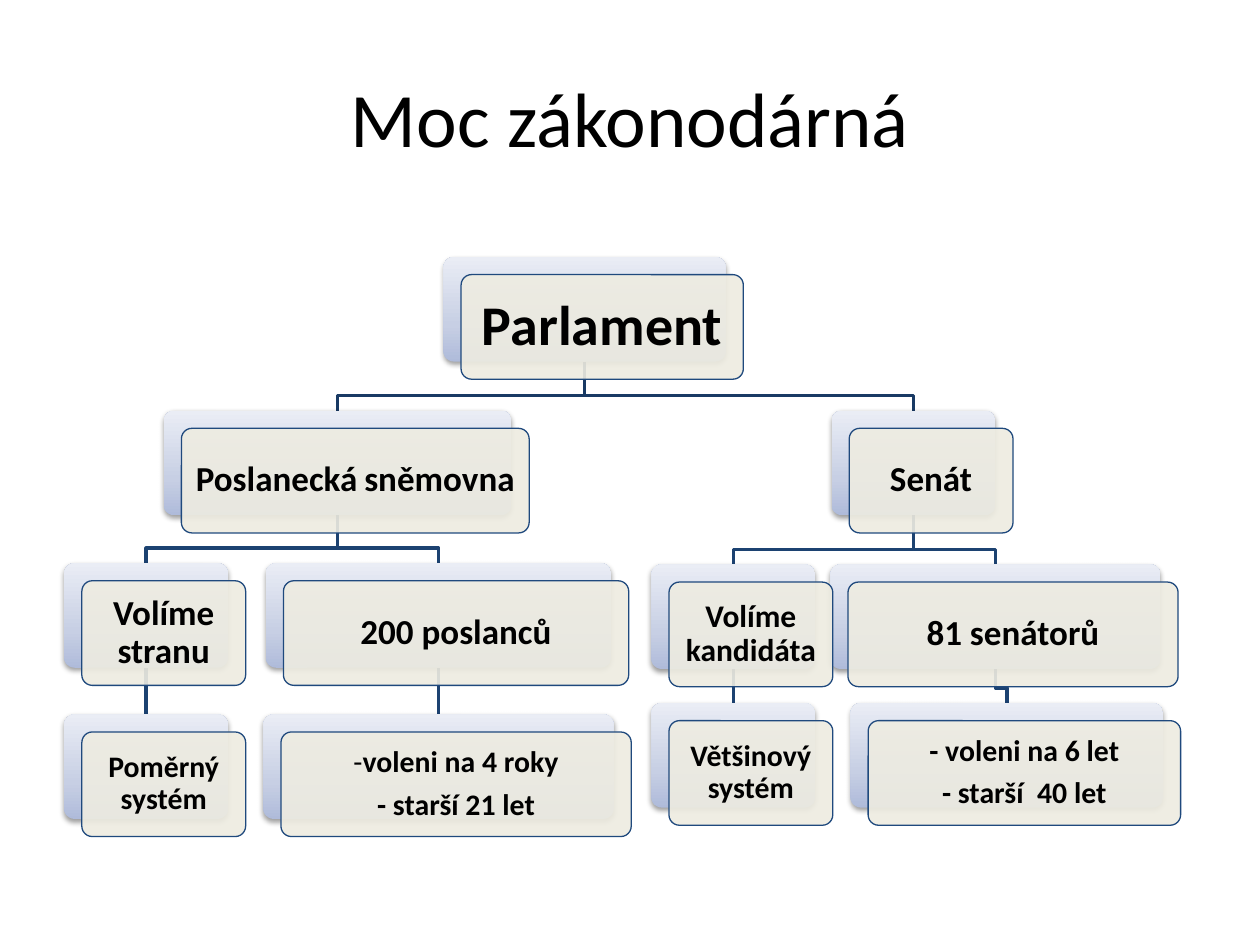
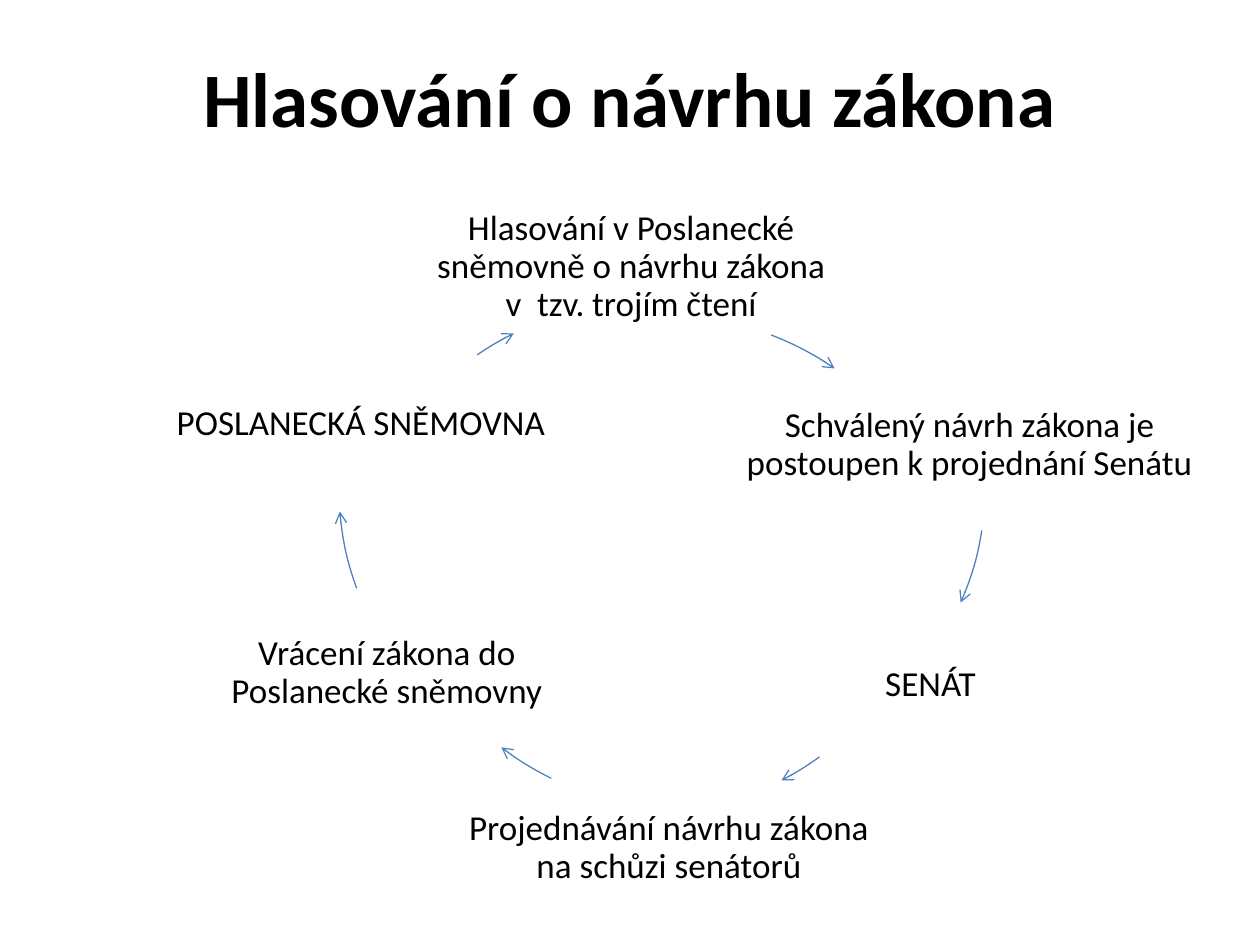
"""Build two slides on the legislative power: a parliament tree and the cycle of a bill."""
from math import atan2, degrees

from lxml import etree
from pptx import Presentation
from pptx.dml.color import RGBColor
from pptx.enum.shapes import MSO_CONNECTOR, MSO_SHAPE
from pptx.enum.text import MSO_ANCHOR, PP_ALIGN
from pptx.oxml.ns import qn
from pptx.util import Inches, Pt

CENTER, MIDDLE = PP_ALIGN.CENTER, MSO_ANCHOR.MIDDLE
ROUNDED, ARC, STRAIGHT = MSO_SHAPE.ROUNDED_RECTANGLE, MSO_SHAPE.ARC, MSO_CONNECTOR.STRAIGHT
BOTTOM_SIDE, TOP_SIDE = 2, 0

FONT = "Calibri"
BLACK, WHITE, CREAM = "000000", "FFFFFF", "EEECE1"
CARD_LINE, ROOT_LINK, LINK, ARROW = "1F497D", "193A64", "1C4271", "4F81BD"
BACK_STOPS = [(0, "AFBBDA"), (35, "C7CFE4"), (100, "EAEDF5")]

CARD_HEIGHT, CARD_OFFSET, BEND_GAP = 0.83, 0.14, 0.12
STEP_HEIGHT, CIRCLE = 0.98, 4.61
SMALL_SPACE = (" ", 17, True)

# name: parent, centre, top, width, size, paragraphs of (text, size, bold)
TREE_TITLE = ("Moc zákonodárná", 1.25, False)
TREE = {
    "parliament": (None, 4.64, 2.04, 2.24, 32, [[("Parlament", 32, True)]]),
    "chamber": ("parliament", 2.68, 3.26, 2.76, 20,
                [[("Poslanecká", 20, True), SMALL_SPACE, ("sněmovna", 20, True)]]),
    "party": ("chamber", 1.16, 4.47, 1.3, 20,
              [[("Volíme", 20, True), SMALL_SPACE, ("stranu", 20, True)]]),
    "proportional": ("party", 1.16, 5.67, 1.3, 17, [[("Poměrný systém", 17, True)]]),
    "deputies": ("chamber", 3.48, 4.47, 2.74, 20, [[("200 poslanců", 20, True)]]),
    "deputy terms": ("deputies", 3.48, 5.67, 2.78, 17,
                     [[("-", 17, False), ("voleni na 4 roky", 17, True)],
                      [("- starší 21 let", 17, True)]]),
    "senate": ("parliament", 7.25, 3.26, 1.3, 20, [[("Senát", 20, True)]]),
    "senators": ("senate", 7.9, 4.48, 2.62, 20, [[("81 senátorů", 20, True)]]),
    "senator terms": ("senators", 7.99, 5.58, 2.48, 17,
                      [[("- voleni na 6 let", 17, True)], [("- starší  40 let", 17, True)]]),
    "candidate": ("senate", 5.82, 4.48, 1.3, 18, [[("Volíme kandidáta", 18, True)]]),
    "majority": ("candidate", 5.82, 5.58, 1.3, 17, [[("Většinový systém", 17, True)]]),
}

# text, box (left, top, width), arrow to the next step (circle corner, start, end)
CYCLE_TITLE = ("Hlasování o návrhu zákona", 0.93, True)
CYCLE = [
    ("Hlasování v Poslanecké sněmovně o návrhu zákona v  tzv. trojím čtení",
     (3.29, 1.63, 3.44), ((3, 2.51), (6.12, 2.66), (6.62, 2.93))),
    ("Schválený návrh zákona je postoupen k projednání Senátu",
     (5.79, 3.04, 3.81), ((3.21, 1.55), (7.79, 4.21), (7.62, 4.78))),
    ("SENÁT", (6.26, 4.95, 2.25), ((2.84, 1.84), (6.5, 6), (6.2, 6.19))),
    ("Projednávání návrhu zákona na schůzi senátorů",
     (3.43, 6.24, 3.76), ((3.08, 1.8), (4.38, 6.17), (3.98, 5.93))),
    ("Vrácení zákona do Poslanecké sněmovny",
     (1.38, 4.85, 3.38), ((2.69, 1.57), (2.83, 4.67), (2.7, 4.06))),
    ("POSLANECKÁ SNĚMOVNA",
     (1.22, 2.88, 3.29), ((2.79, 2.41), (3.79, 2.82), (4.08, 2.65))),
]


def color(value):
    return RGBColor.from_string(value)


def add_xml(parent, tag, **attributes):
    return etree.SubElement(parent, qn(tag), {key: str(value) for key, value in attributes.items()})


def set_line(shape, value, width):
    shape.line.color.rgb = color(value)
    shape.line.width = Pt(width)


def add_titled_slide(deck, text, height, bold):
    slide = deck.slides.add_slide(deck.slide_layouts[5])
    title = slide.shapes.title
    title.left, title.top, title.width, title.height = map(Inches, (0.5, 0.3, 9, height))
    title.text_frame.text = text
    title.text_frame.vertical_anchor = MIDDLE
    para = title.text_frame.paragraphs[0]
    para.alignment = CENTER
    para.font.name, para.font.size, para.font.bold = FONT, Pt(44), bold
    para.font.color.rgb = color(BLACK)
    return slide


def add_box(slide, left, top, width, height, kind=ROUNDED):
    box = slide.shapes.add_shape(kind, *map(Inches, (left, top, width, height)))
    box.shadow.inherit = False
    return box


def write_text(box, paragraphs, size):
    frame = box.text_frame
    frame.word_wrap = True
    frame.vertical_anchor = MIDDLE
    inset = Inches(size * 0.004)
    frame.margin_left = frame.margin_right = frame.margin_top = frame.margin_bottom = inset
    for index, spans in enumerate(paragraphs):
        para = frame.add_paragraph() if index else frame.paragraphs[0]
        para.alignment, para.line_spacing = CENTER, 0.9
        para.space_after = Pt(size * 0.35)
        para.font.name = FONT
        para.font.color.rgb = color(BLACK)
        for text, span_size, bold in spans:
            span = para.add_run()
            span.text = text
            span.font.size, span.font.bold = Pt(span_size), bold


def add_back_card(slide, left, top, width):
    card = add_box(slide, left, top, width, CARD_HEIGHT)
    card.adjustments[0] = 0.1
    card.line.fill.background()
    card.fill.gradient()
    card.fill.gradient_angle = 90
    properties = card.element.spPr
    stops = properties.find(".//" + qn("a:gsLst"))
    for stop in list(stops):
        stops.remove(stop)
    for position, value in BACK_STOPS:
        add_xml(add_xml(stops, "a:gs", pos=position * 1000), "a:srgbClr", val=value)
    shadow = add_xml(properties.find(qn("a:effectLst")), "a:outerShdw", blurRad=Pt(3.1),
                     dist=Pt(1.6), dir=90 * 60000, rotWithShape=0)
    add_xml(add_xml(shadow, "a:srgbClr", val=BLACK), "a:alpha", val=38000)
    return card


def add_front_card(slide, left, top, width, paragraphs, size):
    card = add_box(slide, left + CARD_OFFSET, top + CARD_OFFSET, width, CARD_HEIGHT)
    card.adjustments[0] = 0.1
    card.fill.solid()
    card.fill.fore_color.rgb = color(CREAM)
    add_xml(card.element.spPr.find(qn("a:solidFill"))[0], "a:alpha", val=90000)
    set_line(card, CARD_LINE, 0.75)
    write_text(card, paragraphs, size)


def add_link(slide, parent, child, start, end):
    (x1, y1), (x2, y2) = start, end
    if x1 == x2:
        link = slide.shapes.add_connector(STRAIGHT, *map(Inches, (x1, y1, x2, y2)))
        link.begin_connect(parent, BOTTOM_SIDE)
        link.end_connect(child, TOP_SIDE)
        add_xml(link.element.spPr, "a:effectLst")
    else:
        bend = y2 - BEND_GAP
        corners = [(x1, bend), (x2, bend), end]
        builder = slide.shapes.build_freeform(Inches(x1), Inches(y1))
        builder.add_line_segments([(Inches(x), Inches(y)) for x, y in corners], close=False)
        link = builder.convert_to_shape()
        link.shadow.inherit = False
        link.fill.background()
    return link


def build_tree(deck):
    slide = add_titled_slide(deck, *TREE_TITLE)
    cards = {}
    for name, (_, center, top, width, size, paragraphs) in TREE.items():
        left = center - width / 2
        cards[name] = add_back_card(slide, left, top, width)
        add_front_card(slide, left, top, width, paragraphs, size)
    for name, (parent, center, top, *_) in TREE.items():
        if parent:
            _, parent_center, parent_top, *_ = TREE[parent]
            link = add_link(slide, cards[parent], cards[name],
                            (parent_center, parent_top + CARD_HEIGHT), (center, top))
            set_line(link, ROOT_LINK if parent == "parliament" else LINK, 2)
            cards["parliament"].element.addprevious(link.element)


def add_arc_arrow(slide, corner, start, end):
    left, top = corner
    arc = add_box(slide, left, top, CIRCLE, CIRCLE, ARC)
    arc.fill.background()
    set_line(arc, ARROW, 0.75)
    for index, (x, y) in enumerate((start, end)):
        angle = degrees(atan2(y - top - CIRCLE / 2, x - left - CIRCLE / 2)) % 360
        arc.adjustments[index] = angle * 0.6
    add_xml(arc.element.spPr.find(qn("a:ln")), "a:tailEnd", type="arrow")


def build_cycle(deck):
    slide = add_titled_slide(deck, *CYCLE_TITLE)
    for text, position, arrow in CYCLE:
        step = add_box(slide, *position, STEP_HEIGHT)
        step.fill.solid()
        step.fill.fore_color.rgb = color(WHITE)
        set_line(step, WHITE, 2)
        write_text(step, [[(text, 20, False)]], 20)
        add_arc_arrow(slide, *arrow)


def main():
    deck = Presentation()
    deck.slide_width, deck.slide_height = Inches(10), Inches(7.5)
    build_tree(deck)
    build_cycle(deck)
    deck.save("out.pptx")


if __name__ == "__main__":
    main()
